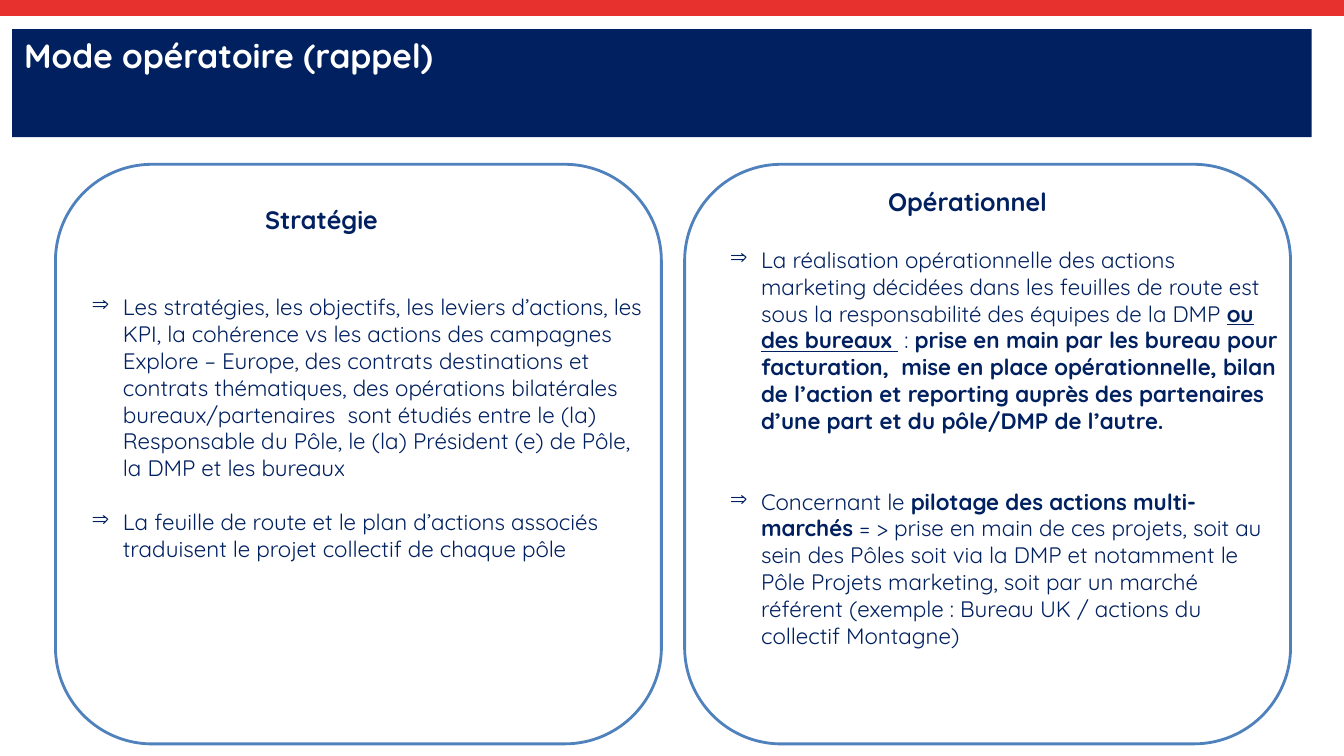
from lxml import etree
from pptx import Presentation
from pptx import util as u
from pptx.dml.color import RGBColor
from pptx.enum import shapes, text
from pptx.oxml.ns import qn

NAVY = RGBColor(0x00, 0x20, 0x60)
BLUE = RGBColor(0x4F, 0x81, 0xBD)
RED = RGBColor(0xE6, 0x31, 0x2E)
WHITE = RGBColor(0xFF, 0xFF, 0xFF)
FONT = "Quicksand"

# Each paragraph is a list of (wording, style) runs; b is bold, u is underlined.
STRATEGY = [
    [("Les stratégies, les objectifs, les leviers d’actions, les KPI, la cohérence vs les "
      "actions des campagnes Explore – Europe, des contrats destinations et contrats "
      "thématiques, des opérations bilatérales bureaux/partenaires  sont étudiés entre le (la) "
      "Responsable du Pôle, le (la) Président (e) de Pôle, la DMP et les bureaux", "")],
    [("La feuille de route et le plan d’actions associés traduisent le projet collectif "
      "de chaque pôle", "")],
]
ACTION = [
    [("La réalisation opérationnelle des actions marketing décidées dans les feuilles de route "
      "est sous la responsabilité des équipes de la DMP ", ""),
     ("ou des bureaux ", "bu"),
     (" : ", ""),
     ("prise en main par les bureau pour facturation,  mise en place opérationnelle, bilan de "
      "l’action et reporting auprès des partenaires d’une part et du pôle/DMP de l’autre.", "b")],
    [("Concernant le ", ""),
     ("pilotage des actions multi-marchés ", "b"),
     ("= > prise en main de ces projets, soit au sein des Pôles soit via la DMP et notamment le "
      "Pôle Projets marketing, soit par un marché référent (exemple : Bureau UK / actions du "
      "collectif Montagne)", "")],
]


def write(para, runs, size=16, color=NAVY):
    for words, style in runs:
        run = para.add_run()
        run.text = words
        font = run.font
        font.name, font.size = FONT, u.Pt(size)
        font.color.rgb = color
        font.bold = "b" in style
        font.underline = "u" in style


def mark(para):
    """Give the paragraph an arrow bullet with a hanging indent."""
    props = para._p.get_or_add_pPr()
    props.set("marL", str(u.Inches(0.65)))
    props.set("indent", str(u.Inches(-0.31)))
    etree.SubElement(props, qn("a:buChar")).set("char", "⇒")


class Page:
    def __init__(self, slide):
        self.items = slide.shapes

    def stripe(self, y, width, weight):
        line = self.items.add_connector(
            shapes.MSO_CONNECTOR.STRAIGHT, 0, u.Inches(y), u.Inches(width), u.Inches(y))
        line.line.color.rgb = RED
        line.line.width = u.Pt(weight)
        etree.SubElement(line._element.spPr, qn("a:effectLst"))

    def block(self, kind, area, fill, edge=None):
        shape = self.items.add_shape(kind, *map(u.Inches, area))
        shape.shadow.inherit = False
        shape.fill.solid()
        shape.fill.fore_color.rgb = fill
        if edge is None:
            shape.line.fill.background()
        else:
            shape.line.color.rgb = edge
            shape.line.width = u.Pt(2)
        return shape

    def banner(self, area, words):
        frame = self.block(shapes.MSO_SHAPE.RECTANGLE, area, NAVY).text_frame
        frame.margin_left = frame.margin_right = u.Inches(0.12)
        frame.margin_top = frame.margin_bottom = u.Inches(0.06)
        frame.vertical_anchor = text.MSO_ANCHOR.TOP
        frame.paragraphs[0].alignment = text.PP_ALIGN.LEFT
        write(frame.paragraphs[0], [(words, "b")], size=24, color=WHITE)

    def box(self, area, wrap):
        frame = self.items.add_textbox(*map(u.Inches, area)).text_frame
        frame.word_wrap = wrap
        frame.auto_size = text.MSO_AUTO_SIZE.SHAPE_TO_FIT_TEXT
        return frame

    def label(self, area, words):
        write(self.box(area, False).paragraphs[0], [(words, "b")], size=18)

    def points(self, area, items, gap):
        frame = self.box(area, True)
        for i, runs in enumerate(items):
            para = frame.add_paragraph() if i else frame.paragraphs[0]
            mark(para)
            if i:
                para.space_before = u.Pt(gap)
            write(para, runs)


def main():
    deck = Presentation()
    deck.slide_width, deck.slide_height = u.Inches(13.33), u.Inches(7.5)
    page = Page(deck.slides.add_slide(deck.slide_layouts[6]))

    page.stripe(0.07, 13.33, 13.25)
    page.banner((0.12, 0.29, 12.89, 1.07), "Mode opératoire (rappel)")
    for left in (0.55, 6.79):
        page.block(shapes.MSO_SHAPE.ROUNDED_RECTANGLE, (left, 1.63, 6.01, 5.75), WHITE, BLUE)
    page.points((6.8, 2.39, 6.01, 4.41), ACTION, gap=38.4)
    page.points((0.47, 2.86, 6.01, 3.06), STRATEGY, gap=19.2)
    page.label((2.53, 1.98, 1.35, 0.4), "Stratégie")
    page.label((8.71, 1.8, 1.95, 0.4), "Opérationnel")

    deck.save("out.pptx")


if __name__ == "__main__":
    main()
